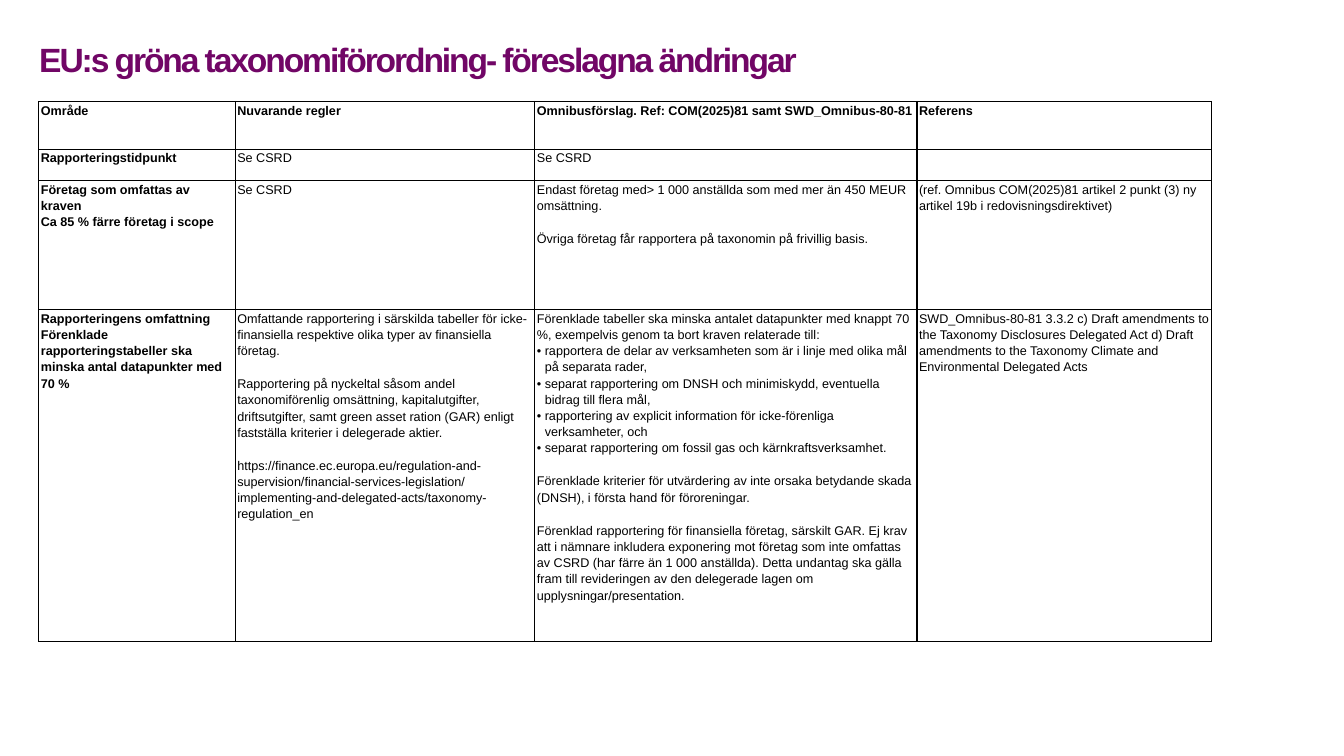
from dataclasses import dataclass
from typing import Any

from lxml.etree import SubElement
from pptx import Presentation
from pptx.dml.color import RGBColor
from pptx.enum.text import MSO_ANCHOR as Anchor
from pptx.oxml.ns import qn
from pptx.util import Cm, Pt


@dataclass(frozen=True)
class Theme:
    font: str = "Arial"
    heading: str = "710666"
    ink: str = "000000"
    paper: str = "FFFFFF"
    heading_size: float = 24
    body_size: float = 9
    tracking: float = -1.5
    border_width: float = 1
    blank_line: float = 12
    after: float = 8


@dataclass(frozen=True)
class Change:
    """One row: area, current rules, proposal and reference, as paragraphs."""
    height: float
    area: list[str]
    current: list[str]
    proposal: list[str]
    reference: list[str]

    def cells(self) -> list[list[str]]:
        return [self.area, self.current, self.proposal, self.reference]


THEME = Theme()
BULLET = "• "
BULLET_INDENT = Cm(0.2)
GAP = "¶"  # starts a paragraph that has a line of space above it
COLUMN_WIDTHS = (4.95, 7.55, 9.63, 7.43)

CHANGES = [
    Change(1.2, ["Område"], ["Nuvarande regler"],
           ["Omnibusförslag. Ref: COM(2025)81 samt SWD_Omnibus-80-81"], ["Referens"]),
    Change(0.79, ["Rapporteringstidpunkt"], ["Se CSRD"], ["Se CSRD"], [""]),
    Change(
        3.25,
        ["Företag som omfattas av kraven", "Ca 85 % färre företag i scope"],
        ["Se CSRD"],
        ["Endast företag med> 1 000 anställda som med mer än 450 MEUR omsättning.",
         GAP + "Övriga företag får rapportera på taxonomin på frivillig basis."],
        ["(ref. Omnibus COM(2025)81 artikel 2 punkt (3) ny artikel 19b i "
         "redovisningsdirektivet)"],
    ),
    Change(
        8.37,
        ["Rapporteringens omfattning",
         "Förenklade rapporteringstabeller ska minska antal datapunkter med 70 %"],
        ["Omfattande rapportering i särskilda tabeller för icke-finansiella "
         "respektive olika typer av finansiella företag.",
         GAP + "Rapportering på nyckeltal såsom andel taxonomiförenlig omsättning, "
         "kapitalutgifter, driftsutgifter, samt green asset ration (GAR) enligt "
         "fastställa kriterier i delegerade aktier.",
         GAP + "https://finance.ec.europa.eu/regulation-and-supervision/"
         "financial-services-legislation/implementing-and-delegated-acts/"
         "taxonomy-regulation_en"],
        ["Förenklade tabeller ska minska antalet datapunkter med knappt 70 %, "
         "exempelvis genom ta bort kraven relaterade till:",
         BULLET + "rapportera de delar av verksamheten som är i linje med olika mål "
         "på separata rader,",
         BULLET + "separat rapportering om DNSH och minimiskydd, eventuella bidrag "
         "till flera mål,",
         BULLET + "rapportering av explicit information för icke-förenliga "
         "verksamheter, och",
         BULLET + "separat rapportering om fossil gas och kärnkraftsverksamhet.",
         GAP + "Förenklade kriterier för utvärdering av inte orsaka betydande skada "
         "(DNSH), i första hand för föroreningar.",
         GAP + "Förenklad rapportering för finansiella företag, särskilt GAR. Ej krav "
         "att i nämnare inkludera exponering mot företag som inte omfattas av CSRD "
         "(har färre än 1 000 anställda). Detta undantag ska gälla fram till "
         "revideringen av den delegerade lagen om upplysningar/presentation."],
        ["SWD_Omnibus-80-81 3.3.2 c) Draft amendments to the Taxonomy Disclosures "
         "Delegated Act d) Draft amendments to the Taxonomy Climate and Environmental "
         "Delegated Acts"],
    ),
]


def style(paragraph: Any, size: float, color: str, bold: bool) -> None:
    font = paragraph.font
    font.name, font.size, font.bold = THEME.font, Pt(size), bold
    font.color.rgb = RGBColor.from_string(color)


def add_bullet(paragraph: Any) -> None:
    properties = paragraph._p.get_or_add_pPr()
    properties.set("marL", str(BULLET_INDENT))
    properties.set("indent", str(-BULLET_INDENT))
    SubElement(properties, qn("a:buFont"), typeface=THEME.font)
    SubElement(properties, qn("a:buChar"), char=BULLET.strip())


def add_borders(cell: Any) -> None:
    properties = cell._tc.get_or_add_tcPr()
    for index, side in enumerate(("lnL", "lnR", "lnT", "lnB")):
        line = properties.makeelement(qn(f"a:{side}"), {"w": str(Pt(THEME.border_width))})
        SubElement(SubElement(line, qn("a:solidFill")), qn("a:srgbClr"), val=THEME.ink)
        properties.insert(index, line)


def fill_cell(cell: Any, lines: list[str], bold: bool) -> None:
    cell.margin_left = cell.margin_right = Cm(0.05)
    cell.margin_top = cell.margin_bottom = 0
    cell.vertical_anchor = Anchor.TOP
    cell.fill.solid()
    cell.fill.fore_color.rgb = RGBColor.from_string(THEME.paper)
    add_borders(cell)

    frame = cell.text_frame
    for index, line in enumerate(lines):
        paragraph = frame.add_paragraph() if index else frame.paragraphs[0]
        paragraph.line_spacing = 1.15
        paragraph.space_before = Pt(THEME.blank_line if line.startswith(GAP) else 0)
        paragraph.space_after = Pt(THEME.after if index == len(lines) - 1 else 0)
        if line.startswith(BULLET):
            add_bullet(paragraph)
        if line:
            paragraph.text = line.removeprefix(GAP).removeprefix(BULLET)
        style(paragraph, THEME.body_size, THEME.ink, bold)


def add_heading(slide: Any, text: str) -> None:
    box = slide.shapes.add_textbox(Cm(0.74), Cm(0.97), Cm(30.76), Cm(1.19))
    frame = box.text_frame
    frame.word_wrap = True
    frame.vertical_anchor = Anchor.MIDDLE
    heading = frame.paragraphs[0]
    heading.text = text
    heading.line_spacing = 0.9
    style(heading, THEME.heading_size, THEME.heading, True)
    tracking = str(round(THEME.tracking * 100))
    heading.runs[0]._r.get_or_add_rPr().set("spc", tracking)


def add_changes(slide: Any, changes: list[Change]) -> None:
    width = sum(COLUMN_WIDTHS)
    height = sum(change.height for change in changes)
    table = slide.shapes.add_table(
        len(changes), len(COLUMN_WIDTHS), Cm(0.98), Cm(2.56), Cm(width), Cm(height)
    ).table
    table.horz_banding = False
    for column, column_width in zip(table.columns, COLUMN_WIDTHS):
        column.width = Cm(column_width)
    for row, change in enumerate(changes):
        table.rows[row].height = Cm(change.height)
        for column, lines in enumerate(change.cells()):
            fill_cell(table.cell(row, column), lines, bold=row == 0 or column == 0)


def main() -> None:
    deck = Presentation()
    deck.slide_width, deck.slide_height = Cm(33.87), Cm(19.05)
    slide = deck.slides.add_slide(deck.slide_layouts[6])

    # Heading
    add_heading(slide, "EU:s gröna taxonomiförordning- föreslagna ändringar")

    # Table of proposed changes
    add_changes(slide, CHANGES)

    deck.save("out.pptx")


if __name__ == "__main__":
    main()
